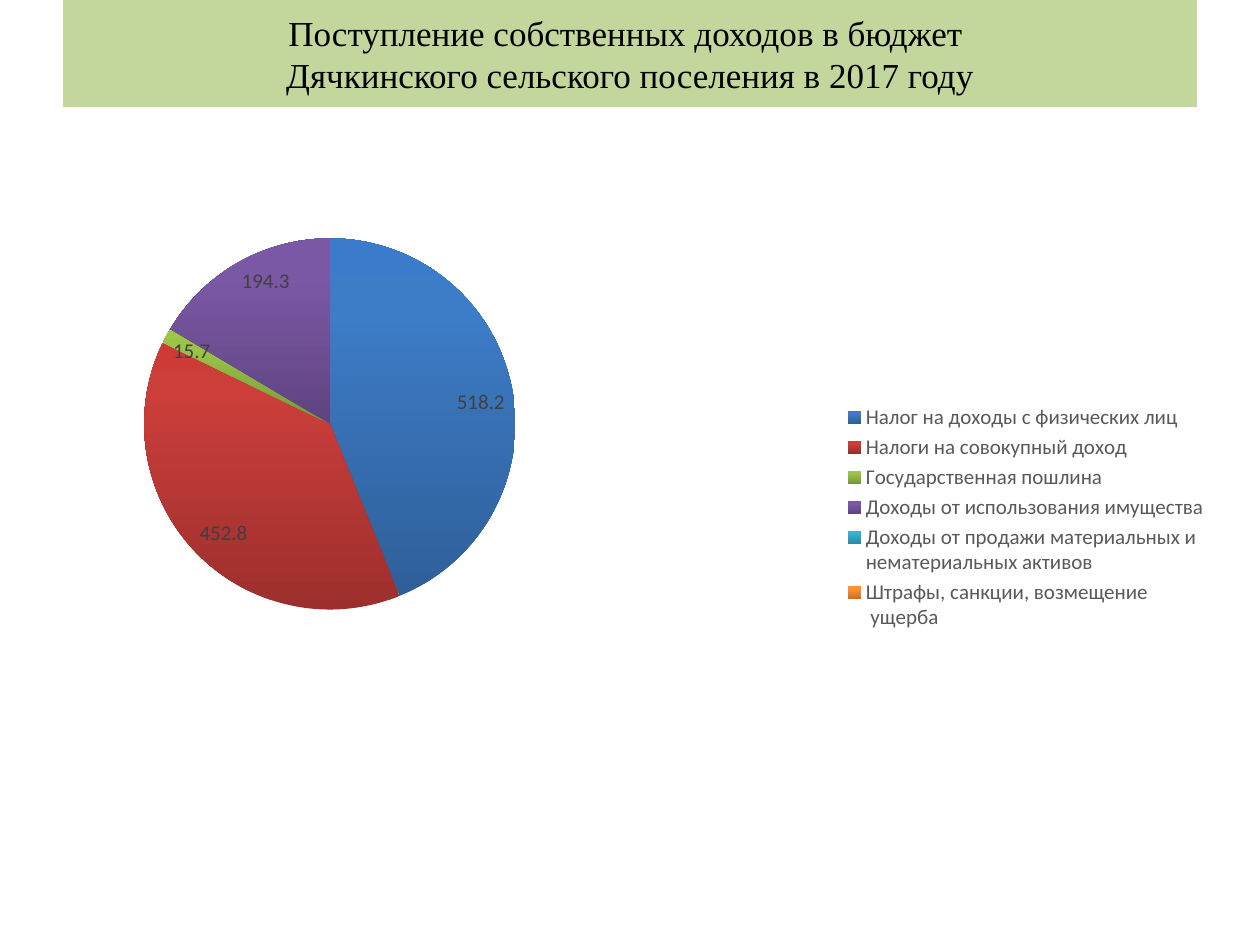
from copy import deepcopy
from typing import NamedTuple, Optional

from pptx import Presentation
from pptx.chart.data import CategoryChartData
from pptx.dml.color import RGBColor
from pptx.enum.chart import XL_CHART_TYPE, XL_LABEL_POSITION as LabelPosition, XL_LEGEND_POSITION
from pptx.enum.text import MSO_ANCHOR, PP_ALIGN
from pptx.oxml import parse_xml
from pptx.oxml.ns import nsdecls
from pptx.util import Pt

BLACK = RGBColor(0x00, 0x00, 0x00)
LABEL_GRAY = RGBColor(0x40, 0x40, 0x40)
LEGEND_GRAY = RGBColor(0x59, 0x59, 0x59)
TITLE_GREEN = RGBColor(0xC3, 0xD6, 0x9B)
STOP_POSITIONS = (0, 0.8, 1)


class Income(NamedTuple):
    name: str
    amount: Optional[float]
    gradient: tuple[RGBColor, RGBColor, RGBColor]


class Area(NamedTuple):
    """Fractions of the chart's width and height."""
    x: float
    y: float
    w: float
    h: float


def shades(*codes: str) -> tuple[RGBColor, ...]:
    return tuple(RGBColor.from_string(code) for code in codes)


INCOMES = [
    Income("Налог на доходы с физических лиц", 518.2, shades("2F5F99", "3D7CC7", "3A7CCB")),
    Income("Налоги на совокупный доход", 452.8, shades("9C2F2D", "CB3E3A", "CE3B37")),
    Income("Государственная пошлина", 15.7, shades("779737", "9BC348", "9DC746")),
    Income("Доходы от использования имущества", 194.3, shades("5F4480", "7B58A6", "7C57A8")),
    Income("Доходы от продажи материальных и \nнематериальных активов", None,
           shades("2A88A2", "37B1D2", "34B4D6")),
    Income("Штрафы, санкции, возмещение\n ущерба", None, shades("CC6E20", "FF9034", "FF9136")),
]
PIE_AREA = Area(0.07, 0.12, 0.32, 0.54)
LEGEND_AREA = Area(0.67, 0.36, 0.32, 0.29)


def style_font(font, name: str, size: float, color: RGBColor) -> None:
    font.name, font.size, font.color.rgb = name, Pt(size), color


def manual_layout(area: Area, inner: bool = False):
    target = '<c:layoutTarget val="inner"/>' if inner else ""
    modes = '<c:xMode val="edge"/><c:yMode val="edge"/>'
    sizes = "".join(f'<c:{key} val="{value}"/>' for key, value in area._asdict().items())
    return parse_xml(f'<c:layout {nsdecls("c")}><c:manualLayout>{target}{modes}{sizes}'
                     "</c:manualLayout></c:layout>")


def fill_gradient(fill, colors: tuple[RGBColor, ...]) -> None:
    """Fill upwards from the first colour to the last."""
    fill.gradient()
    fill.gradient_angle = 90
    first = fill.gradient_stops[0]._gs
    first.addnext(deepcopy(first))
    for stop, position, color in zip(fill.gradient_stops, STOP_POSITIONS, colors):
        stop.position = position
        stop.color.rgb = color


def add_title(page) -> None:
    title = page.shapes.title
    title.left, title.top, title.width, title.height = Pt(36), Pt(0), Pt(648), Pt(61.2)
    title.fill.solid()
    title.fill.fore_color.rgb = TITLE_GREEN
    frame = title.text_frame
    frame.text = "Поступление собственных доходов в бюджет \vДячкинского сельского поселения в 2017 году"
    frame.vertical_anchor = MSO_ANCHOR.MIDDLE
    para = frame.paragraphs[0]
    para.alignment = PP_ALIGN.CENTER
    style_font(para.font, "Times New Roman", 20, BLACK)


def add_income_pie(page) -> None:
    data = CategoryChartData()
    data.categories = [income.name for income in INCOMES]
    data.add_series("Series 1", [income.amount for income in INCOMES])
    chart = page.shapes.add_chart(XL_CHART_TYPE.PIE, Pt(36), Pt(61.2), Pt(663), Pt(464.4), data).chart
    style_font(chart.font, "Calibri", 10, BLACK)
    chart.has_title = False

    chart.has_legend = True
    legend = chart.legend
    legend.position = XL_LEGEND_POSITION.RIGHT
    legend.include_in_layout = False
    style_font(legend.font, "Calibri", 12, LEGEND_GRAY)
    for layout in legend._element.findall("{*}layout"):
        legend._element.remove(layout)
    legend._element.find("{*}legendPos").addnext(manual_layout(LEGEND_AREA))

    plot_area = chart._chartSpace.chart.plotArea
    for layout in plot_area.findall("{*}layout"):
        plot_area.remove(layout)
    plot_area.insert(0, manual_layout(PIE_AREA, inner=True))

    plot = chart.plots[0]
    plot.vary_by_categories = True
    series = plot.series[0]
    for index, income in enumerate(INCOMES):
        fill_gradient(series.points[index].format.fill, income.gradient)
    labels = series.data_labels
    labels.show_value = True
    labels.position = LabelPosition.INSIDE_END
    style_font(labels.font, "Calibri", 12, LABEL_GRAY)


def main() -> None:
    deck = Presentation()
    deck.slide_width, deck.slide_height = Pt(720), Pt(540)
    page = deck.slides.add_slide(deck.slide_layouts[5])
    add_title(page)
    add_income_pie(page)
    deck.save("out.pptx")


if __name__ == "__main__":
    main()
